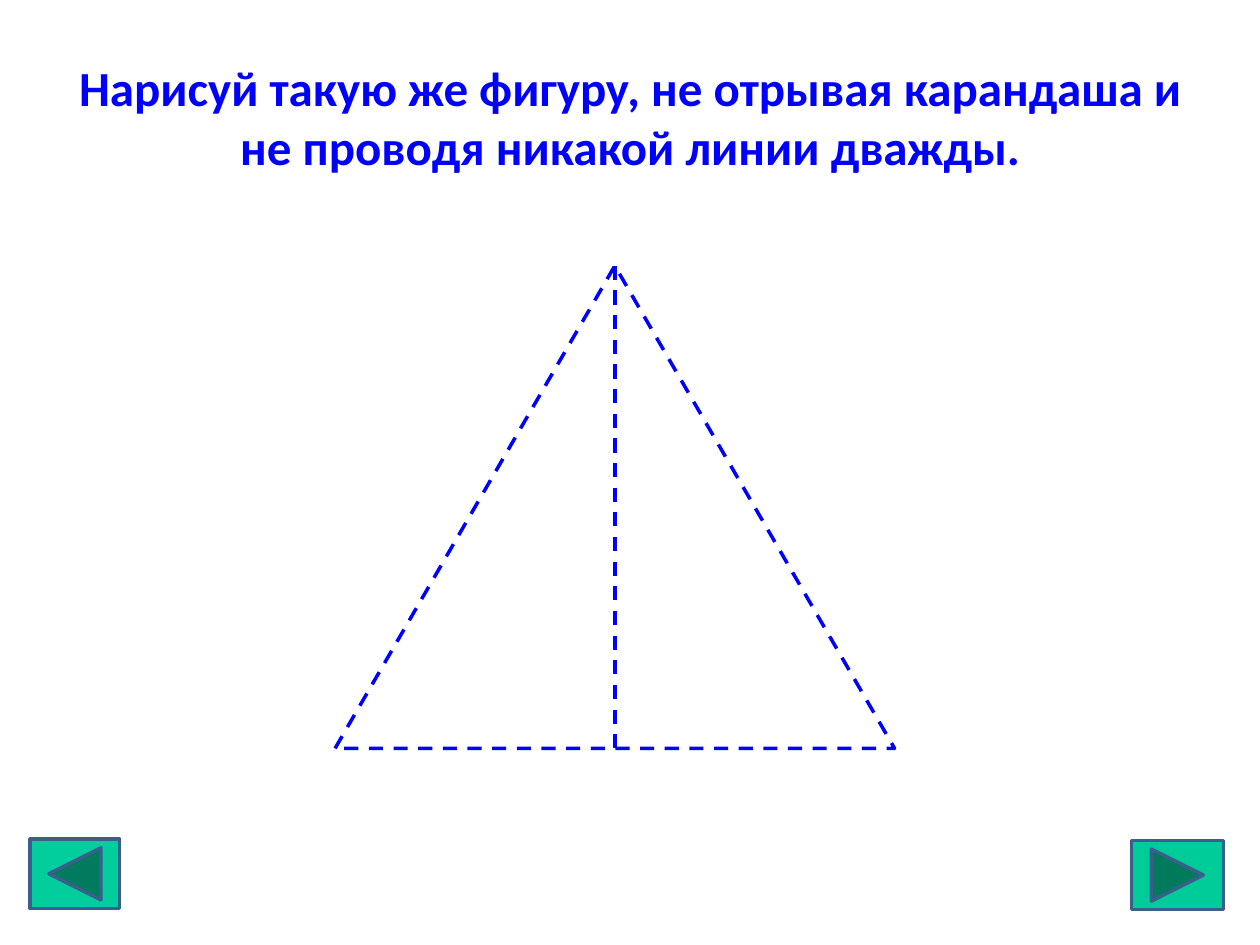
"""Build a slide with a one-stroke drawing puzzle."""
from lxml import etree
from pptx import Presentation
from pptx.dml.color import RGBColor
from pptx.enum.dml import MSO_LINE
from pptx.enum.shapes import MSO_CONNECTOR, MSO_SHAPE
from pptx.enum.text import MSO_ANCHOR, PP_ALIGN
from pptx.oxml.ns import qn
from pptx.util import Inches, Pt

DASH = MSO_LINE.DASH
BACK = MSO_SHAPE.ACTION_BUTTON_BACK_OR_PREVIOUS
NEXT = MSO_SHAPE.ACTION_BUTTON_FORWARD_OR_NEXT

TITLE = "Нарисуй такую же фигуру, не отрывая карандаша и не проводя никакой линии дважды."
BLUE, WHITE, EDGE = "0000FF", "FFFFFF", "3A5F8C"
LEFT, TOP, WIDTH, HEIGHT = 2.66, 2.11, 4.44, 3.83
BUTTONS = [
    (NEXT, (8.98, 6.67, 0.73, 0.55), "00CC99"),
    (BACK, (0.24, 6.66, 0.71, 0.55), "02CE9D"),
]


def paint(color, tone):
    color.rgb = RGBColor.from_string(tone)


def stroke(line, tone, dash=None):
    paint(line.color, tone)
    line.width = Pt(2)
    if dash:
        line.dash_style = dash


def add_shape(slide, kind, box, fill, edge, dash=None):
    shape = slide.shapes.add_shape(kind, *map(Inches, box))
    shape.shadow.inherit = False
    shape.fill.solid()
    paint(shape.fill.fore_color, fill)
    stroke(shape.line, edge, dash)


def add_title(slide):
    box = slide.shapes.add_textbox(*map(Inches, (0.5, 0.3, 9, 1.25)))
    frame = box.text_frame
    frame.word_wrap = True
    frame.vertical_anchor = MSO_ANCHOR.MIDDLE
    frame.text = TITLE
    para = frame.paragraphs[0]
    para.alignment = PP_ALIGN.CENTER
    font = para.runs[0].font
    font.name, font.size, font.bold = "Calibri", Pt(28), True
    paint(font.color, BLUE)


def add_height(slide):
    mid = LEFT + WIDTH / 2
    ends = map(Inches, (mid, TOP, mid, TOP + HEIGHT))
    line = slide.shapes.add_connector(MSO_CONNECTOR.STRAIGHT, *ends)
    stroke(line.line, BLUE, DASH)
    etree.SubElement(line._element.spPr, qn("a:effectLst"))


def main():
    deck = Presentation()
    deck.slide_width, deck.slide_height = Inches(10), Inches(7.5)
    slide = deck.slides.add_slide(deck.slide_layouts[6])
    add_title(slide)
    add_shape(slide, MSO_SHAPE.ISOSCELES_TRIANGLE,
              (LEFT, TOP, WIDTH, HEIGHT), WHITE, BLUE, DASH)
    add_height(slide)
    for kind, box, fill in BUTTONS:
        add_shape(slide, kind, box, fill, EDGE)
    deck.save("out.pptx")


if __name__ == "__main__":
    main()
